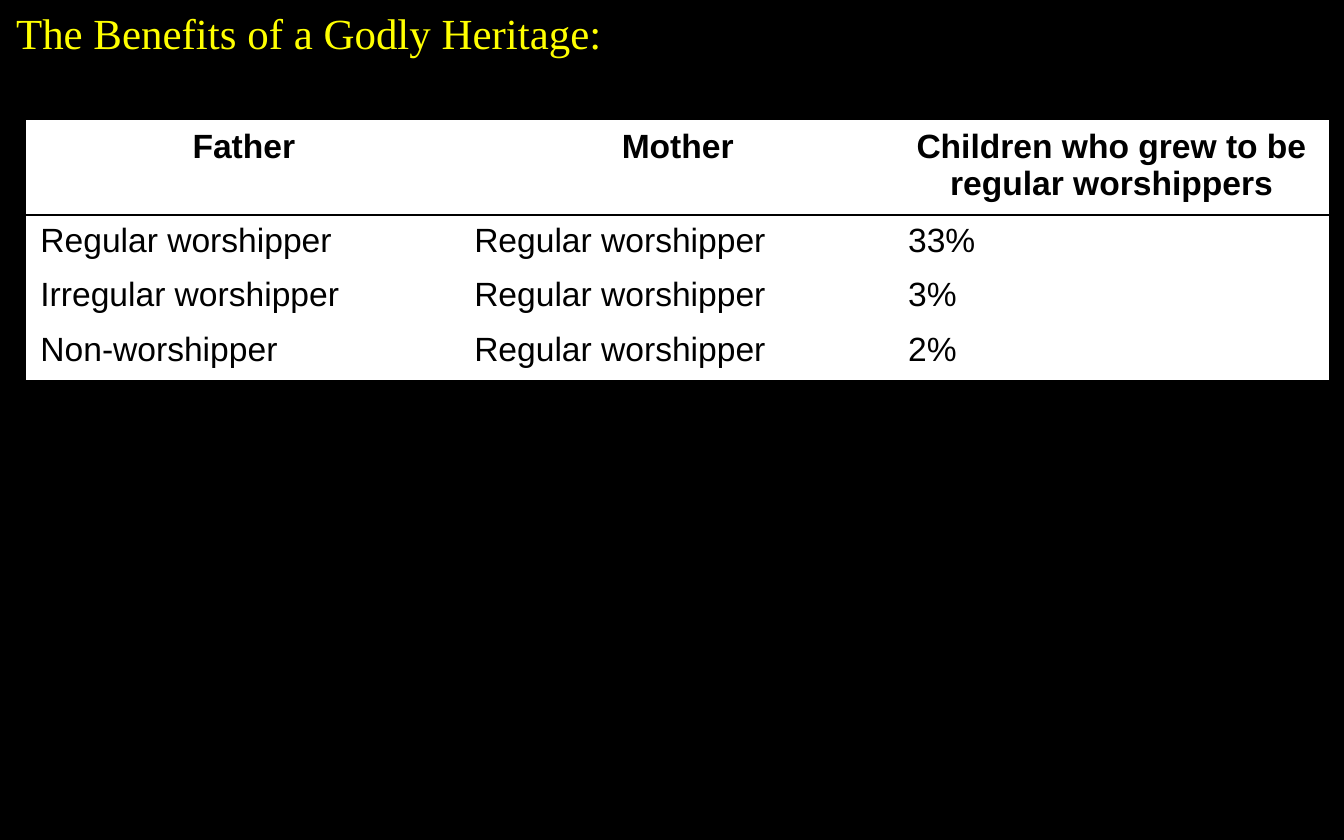
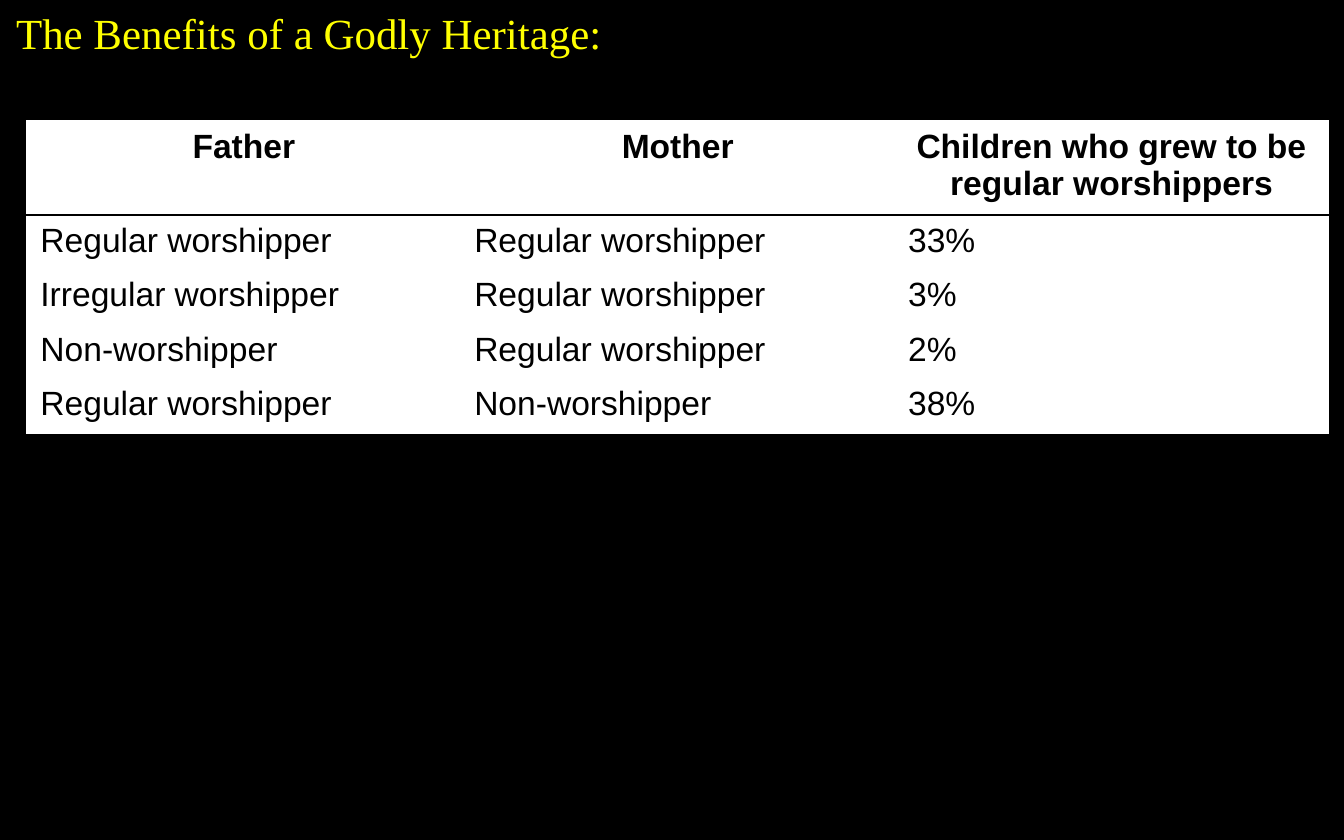
from dataclasses import dataclass

from lxml.etree import SubElement
from pptx import Presentation
from pptx.dml.color import RGBColor
from pptx.enum.text import MSO_ANCHOR, MSO_AUTO_SIZE, PP_ALIGN
from pptx.oxml.ns import qn
from pptx.presentation import Presentation as Deck
from pptx.slide import Slide
from pptx.table import _Cell as Cell
from pptx.text.text import TextFrame
from pptx.util import Cm, Pt

BLACK, WHITE, YELLOW = "000000", "FFFFFF", "FFFF00"
TITLE_ONLY = 5

TITLE = "The Benefits of a Godly Heritage:"
HEADINGS = ("Father", "Mother", "Children who grew to be regular worshippers")
REGULAR, IRREGULAR, NONE = "Regular worshipper", "Irregular worshipper", "Non-worshipper"

TITLE_PLACE = {"left": Cm(0.05), "top": Cm(0), "width": Cm(25.35), "height": Cm(1.24)}
TITLE_FRAME = {
    "word_wrap": True,
    "auto_size": MSO_AUTO_SIZE.SHAPE_TO_FIT_TEXT,
    "vertical_anchor": MSO_ANCHOR.TOP,
}
TITLE_FONT = {"name": "Times New Roman", "size": Pt(23), "bold": False}
HEADING_FONT = {"name": "Arial", "size": Pt(18), "bold": True}
BODY_FONT = HEADING_FONT | {"bold": False}

TABLE_LEFT, TABLE_TOP = Cm(0.51), Cm(2.29)
COLUMN_WIDTH, HEADING_HEIGHT, BODY_HEIGHT = Cm(8.2), Cm(1.78), Cm(1.03)
RULE_WIDTH = Pt(1)


@dataclass(frozen=True)
class Family:
    father: str
    mother: str
    children: str

    def texts(self) -> tuple[str, str, str]:
        return self.father, self.mother, self.children


FAMILIES = (
    Family(REGULAR, REGULAR, "33%"),
    Family(IRREGULAR, REGULAR, "3%"),
    Family(NONE, REGULAR, "2%"),
    Family(REGULAR, NONE, "38%"),
)


def colour(value: str) -> RGBColor:
    return RGBColor.from_string(value)


def apply(target: object, values: dict) -> None:
    for name, value in values.items():
        setattr(target, name, value)


def write(frame: TextFrame, text: str, font: dict, ink: str, align: PP_ALIGN) -> None:
    para = frame.paragraphs[0]
    para.alignment = align
    span = para.add_run()
    span.text = text
    apply(span.font, font)
    span.font.color.rgb = colour(ink)


def add_title(page: Slide) -> None:
    title = page.shapes.title
    apply(title, TITLE_PLACE)
    apply(title.text_frame, TITLE_FRAME)
    write(title.text_frame, TITLE, TITLE_FONT, YELLOW, PP_ALIGN.LEFT)


def set_borders(cell: Cell, top: str, bottom: str) -> None:
    properties = cell._tc.get_or_add_tcPr()
    for side, ink in (("L", WHITE), ("R", WHITE), ("T", top), ("B", bottom)):
        line = SubElement(properties, qn(f"a:ln{side}"), w=str(RULE_WIDTH))
        SubElement(SubElement(line, qn("a:solidFill")), qn("a:srgbClr"), val=ink)


def fill_cell(cell: Cell, text: str, row: int) -> None:
    heading = row == 0
    # The rule under the headings belongs to the cells on both sides of it.
    set_borders(cell, BLACK if row == 1 else WHITE, BLACK if heading else WHITE)
    cell.fill.solid()
    cell.fill.fore_color.rgb = colour(WHITE)
    font = HEADING_FONT if heading else BODY_FONT
    align = PP_ALIGN.CENTER if heading else PP_ALIGN.LEFT
    write(cell.text_frame, text, font, BLACK, align)


def add_family_table(page: Slide, families: tuple[Family, ...]) -> None:
    rows = [HEADINGS, *(family.texts() for family in families)]
    heights = [HEADING_HEIGHT] + [BODY_HEIGHT] * len(families)
    table = page.shapes.add_table(
        len(rows), len(HEADINGS), TABLE_LEFT, TABLE_TOP,
        COLUMN_WIDTH * len(HEADINGS), sum(heights),
    ).table
    table.horz_banding = False
    for column in table.columns:
        column.width = COLUMN_WIDTH
    for row, (texts, height) in enumerate(zip(rows, heights)):
        table.rows[row].height = height
        for column, text in enumerate(texts):
            fill_cell(table.cell(row, column), text, row)


def add_heritage_page(deck: Deck, families: tuple[Family, ...]) -> None:
    page = deck.slides.add_slide(deck.slide_layouts[TITLE_ONLY])
    add_title(page)
    add_family_table(page, families)


def main() -> None:
    deck = Presentation()
    apply(deck, {"slide_width": Cm(25.4), "slide_height": Cm(15.88)})
    background = deck.slide_master.background.fill
    background.solid()
    background.fore_color.rgb = colour(BLACK)
    for shown in (3, 4):
        add_heritage_page(deck, FAMILIES[:shown])
    deck.save("out.pptx")


if __name__ == "__main__":
    main()
